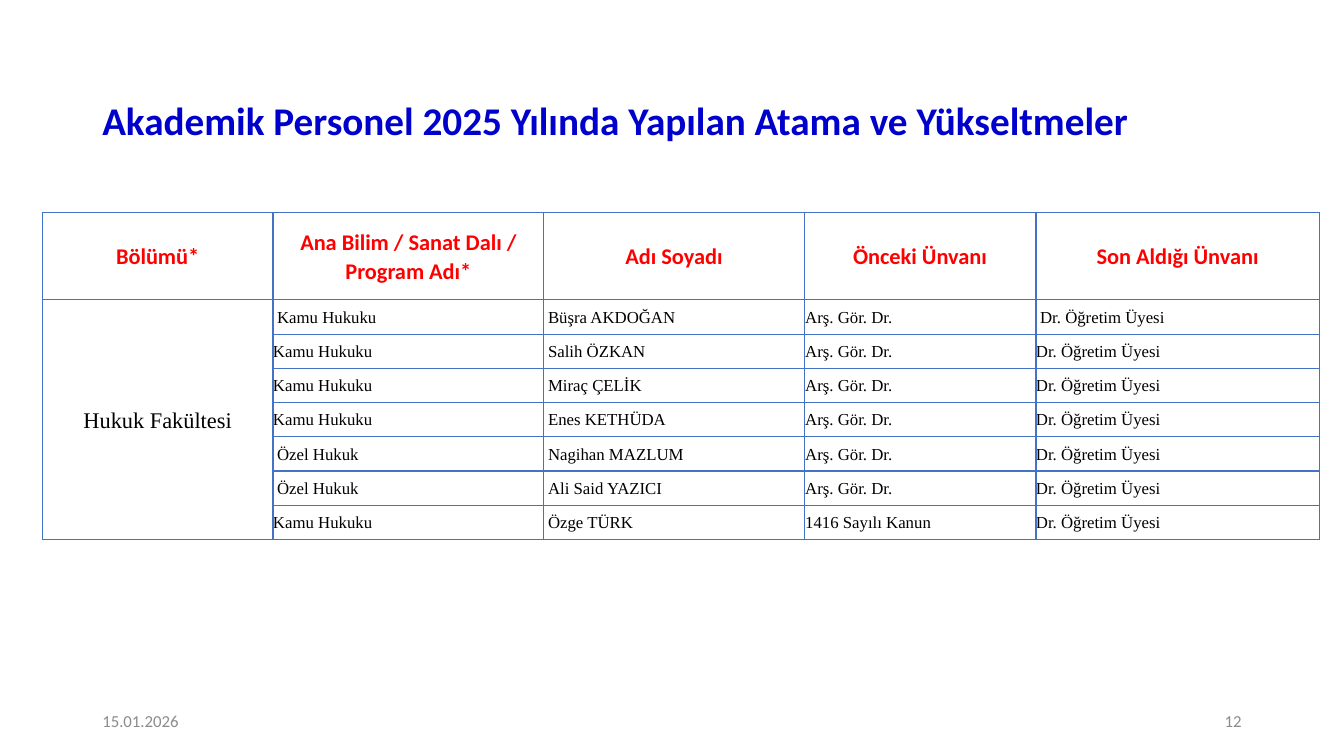
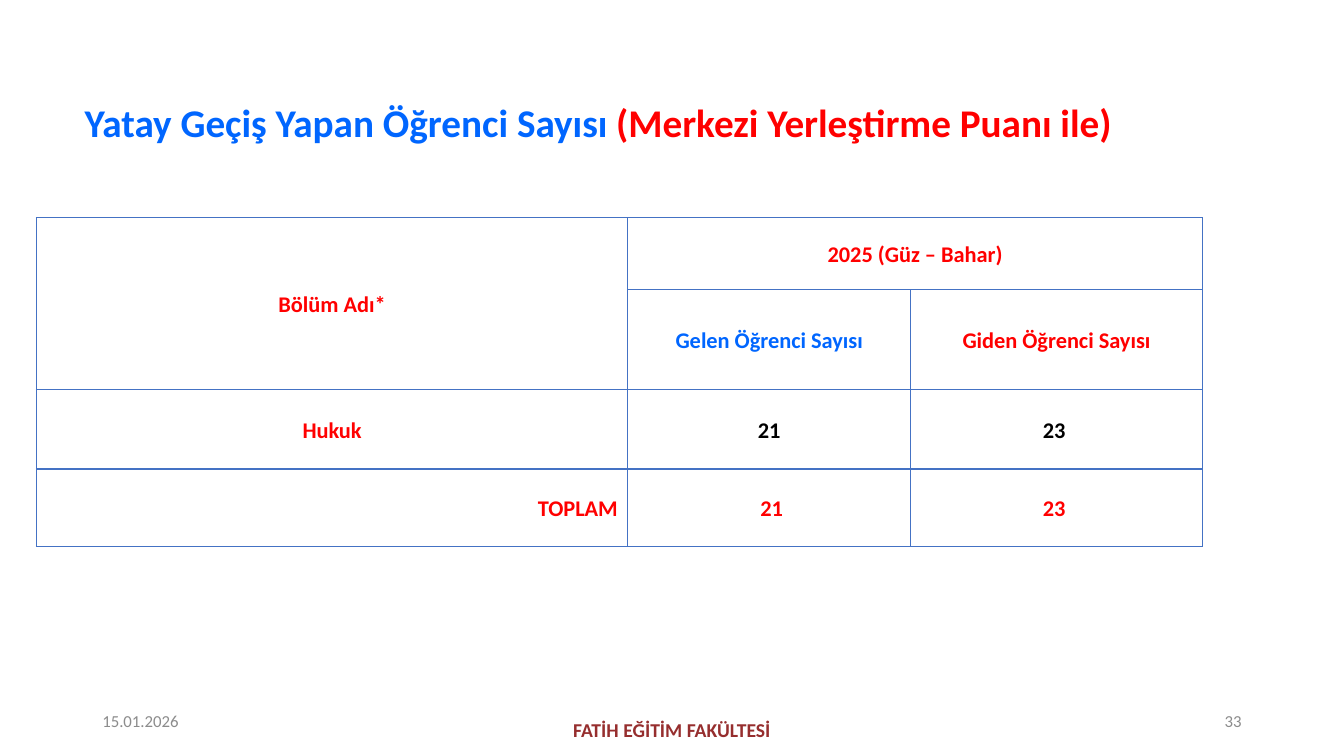
from dataclasses import dataclass, replace

from lxml import etree
from pptx import Presentation
from pptx.dml.color import RGBColor
from pptx.enum.text import MSO_ANCHOR, PP_ALIGN
from pptx.oxml.ns import qn
from pptx.slide import Slide
from pptx.table import _Cell
from pptx.util import Pt

LEFT, CENTER, RIGHT = PP_ALIGN.LEFT, PP_ALIGN.CENTER, PP_ALIGN.RIGHT
MIDDLE = MSO_ANCHOR.MIDDLE
BLANK_LAYOUT = 6


@dataclass(frozen=True)
class Theme:
    navy: str = "0000CC"
    blue: str = "0066FF"
    red: str = "FF0000"
    maroon: str = "962E2E"
    black: str = "000000"
    grey: str = "8C8C8C"
    border: str = "4472C4"
    sans: str = "Calibri"
    serif: str = "Times New Roman"
    title_size: float = 28
    table_size: float = 16
    faculty_size: float = 14
    small_size: float = 12
    border_width: float = 1


THEME = Theme()


@dataclass(frozen=True)
class Frame:
    left: float
    top: float
    width: float
    height: float


@dataclass(frozen=True)
class Style:
    size: float
    color: str
    bold: bool = False
    align: PP_ALIGN = LEFT
    font: str = THEME.sans
    line_spacing: float = 1.0


@dataclass(frozen=True)
class Span:
    text: str
    color: str


@dataclass(frozen=True)
class Entry:
    """One table cell: its text, style, side insets and extent in cells."""
    text: str
    style: Style
    left: float = 0
    right: float = 0
    rows: int = 1
    columns: int = 1


TITLE = Style(THEME.title_size, THEME.navy, True, CENTER, line_spacing=0.9)
FOOTER = Style(THEME.small_size, THEME.grey)
FACULTY = Style(THEME.faculty_size, THEME.maroon, True, CENTER)
HEADER = Style(THEME.table_size, THEME.red, True, CENTER, line_spacing=1.07)
HEADER_BLUE = replace(HEADER, color=THEME.blue)
COUNT = replace(HEADER, color=THEME.black)
TOTAL = replace(HEADER, align=RIGHT)
UNIT = replace(COUNT, bold=False, font=THEME.serif)
BODY = replace(UNIT, size=THEME.small_size, align=LEFT)

DATE = "15.01.2026"
DATE_FRAME = Frame(66, 500.5, 216, 28.75)
NUMBER_FRAME = Frame(678, 500.5, 216, 28.75)
FACULTY_FRAME = Frame(318, 507, 324, 28.75)

BODY_INSET = 3
COUNT_INSET = 3.6
TOTAL_INSET = 7.2

PROMOTION_HEADERS = ("Bölümü*", "Ana Bilim / Sanat Dalı / Program Adı*", "Adı Soyadı",
                     "Önceki Ünvanı", "Son Aldığı Ünvanı")
ASSISTANT = "Arş. Gör. Dr."
LECTURER = "Dr. Öğretim Üyesi"


@dataclass(frozen=True)
class Promotion:
    branch: str
    name: str
    former: str = ASSISTANT
    branch_inset: float = 0
    title_inset: float = 0


PROMOTIONS = (
    Promotion("Kamu Hukuku", "Büşra AKDOĞAN", branch_inset=BODY_INSET, title_inset=BODY_INSET),
    Promotion("Kamu Hukuku", "Salih ÖZKAN"),
    Promotion("Kamu Hukuku", "Miraç ÇELİK"),
    Promotion("Kamu Hukuku", "Enes KETHÜDA"),
    Promotion("Özel Hukuk", "Nagihan MAZLUM", branch_inset=BODY_INSET),
    Promotion("Özel Hukuk", "Ali Said YAZICI", branch_inset=BODY_INSET),
    Promotion("Kamu Hukuku", "Özge TÜRK", "1416 Sayılı Kanun"),
)


def write_text(text_frame, spans: list[Span], style: Style) -> None:
    para = text_frame.paragraphs[0]
    para.alignment = style.align
    para.line_spacing = style.line_spacing
    para.font.name = style.font
    para.font.size = Pt(style.size)
    para.font.bold = style.bold
    para.font.color.rgb = RGBColor.from_string(spans[0].color)
    for span in spans:
        run = para.add_run()
        run.text = span.text
        if span.color != spans[0].color:
            run.font.color.rgb = RGBColor.from_string(span.color)


def add_text(page: Slide, frame: Frame, spans: list[Span], style: Style) -> None:
    box = page.shapes.add_textbox(Pt(frame.left), Pt(frame.top), Pt(frame.width), Pt(frame.height))
    box.text_frame.word_wrap = True
    box.text_frame.vertical_anchor = MIDDLE
    write_text(box.text_frame, spans, style)


def add_page(deck, title_frame: Frame, title: list[Span], number: str) -> Slide:
    """Add a slide with its title, date and page number."""
    page = deck.slides.add_slide(deck.slide_layouts[BLANK_LAYOUT])
    add_text(page, title_frame, title, TITLE)
    add_text(page, DATE_FRAME, [Span(DATE, FOOTER.color)], FOOTER)
    add_text(page, NUMBER_FRAME, [Span(number, FOOTER.color)], replace(FOOTER, align=RIGHT))
    return page


def format_cell(cell: _Cell) -> None:
    """Give a cell its borders, no fill and no insets."""
    cell.margin_left = cell.margin_right = cell.margin_top = cell.margin_bottom = 0
    cell.vertical_anchor = MIDDLE
    properties = cell._tc.get_or_add_tcPr()
    for side in ("a:lnL", "a:lnR", "a:lnT", "a:lnB"):
        line = etree.SubElement(properties, qn(side), w=str(Pt(THEME.border_width)))
        fill = etree.SubElement(line, qn("a:solidFill"))
        etree.SubElement(fill, qn("a:srgbClr"), val=THEME.border)
    cell.fill.background()


def add_grid(page: Slide, left: float, top: float, widths: list[float], heights: list[float],
             entries: list[list[Entry | None]]) -> None:
    """Draw a table; None stands for a cell covered by a merged one."""
    table = page.shapes.add_table(len(heights), len(widths), Pt(left), Pt(top),
                                  Pt(sum(widths)), Pt(sum(heights))).table
    table.first_row = table.horz_banding = False
    for column, width in zip(table.columns, widths):
        column.width = Pt(width)
    for row, height in zip(table.rows, heights):
        row.height = Pt(height)
    for row_index, row_entries in enumerate(entries):
        for column_index, entry in enumerate(row_entries):
            cell = table.cell(row_index, column_index)
            format_cell(cell)
            if entry is None:
                continue
            cell.margin_left, cell.margin_right = Pt(entry.left), Pt(entry.right)
            write_text(cell.text_frame, [Span(entry.text, entry.style.color)], entry.style)
            if entry.rows > 1 or entry.columns > 1:
                cell.merge(table.cell(row_index + entry.rows - 1,
                                      column_index + entry.columns - 1))


def add_promotions(deck) -> None:
    page = add_page(deck, Frame(26, 62.5, 826.5, 50),
                    [Span("Akademik Personel 2025 Yılında Yapılan Atama ve Yükseltmeler",
                          THEME.navy)], "12")
    faculty = Entry("Hukuk Fakültesi", UNIT, rows=len(PROMOTIONS))
    entries = [[Entry(text, HEADER) for text in PROMOTION_HEADERS]]
    for index, item in enumerate(PROMOTIONS):
        entries.append([
            faculty if index == 0 else None,
            Entry(item.branch, BODY, left=item.branch_inset),
            Entry(item.name, BODY, left=BODY_INSET),
            Entry(item.former, BODY, left=0.7),
            Entry(LECTURER, BODY, left=item.title_inset),
        ])
    add_grid(page, 30.25, 151.75, [164.75, 193.5, 186, 165.5, 202.5],
             [62.5] + [24.45] * len(PROMOTIONS), entries)


def add_transfers(deck) -> None:
    page = add_page(deck, Frame(10, 65.5, 834.5, 47.5),
                    [Span("Yatay Geçiş Yapan Öğrenci Sayısı ", THEME.blue),
                     Span("(Merkezi Yerleştirme Puanı ile)", THEME.red)], "33")
    add_text(page, FACULTY_FRAME, [Span("FATİH EĞİTİM FAKÜLTESİ", FACULTY.color)], FACULTY)
    add_grid(page, 26, 155.5, [422.5, 202, 208.5], [51.5, 71.5, 56.5, 55.5], [
        [Entry("Bölüm Adı*", HEADER, rows=2),
         Entry("2025 (Güz – Bahar)", HEADER, columns=2), None],
        [None, Entry("Gelen Öğrenci Sayısı", HEADER_BLUE), Entry("Giden Öğrenci Sayısı", HEADER)],
        [Entry("Hukuk", HEADER), Entry("21", COUNT), Entry("23", COUNT, right=COUNT_INSET)],
        [Entry("TOPLAM", TOTAL, right=TOTAL_INSET), Entry("21", HEADER, left=COUNT_INSET),
         Entry("23", HEADER, right=COUNT_INSET)],
    ])


def main() -> None:
    deck = Presentation()
    deck.slide_width, deck.slide_height = Pt(960), Pt(540)
    add_promotions(deck)
    add_transfers(deck)
    deck.save("out.pptx")


if __name__ == "__main__":
    main()
